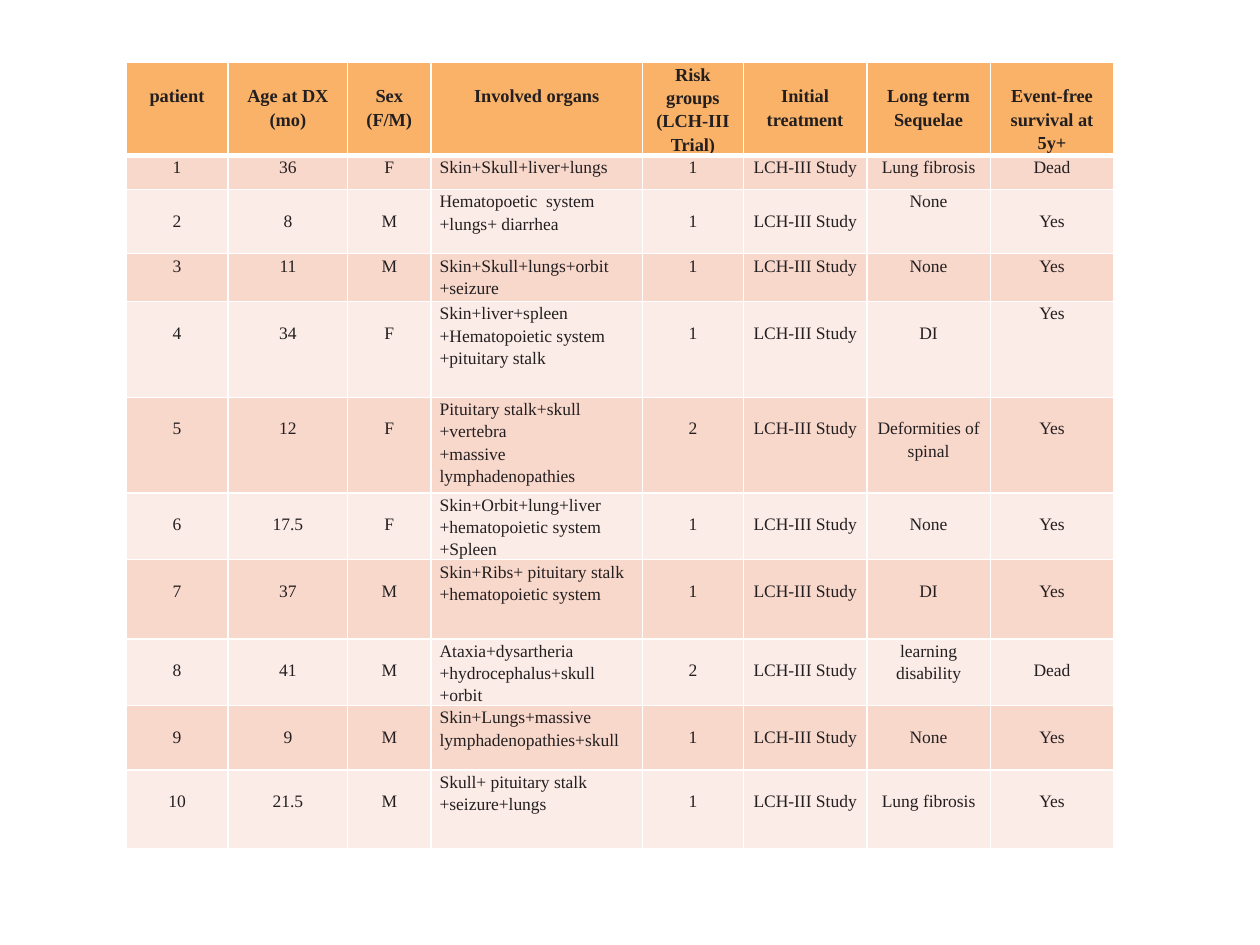
from dataclasses import dataclass

from lxml import etree
from pptx import Presentation
from pptx.dml.color import RGBColor
from pptx.enum.text import PP_ALIGN
from pptx.oxml.ns import qn
from pptx.util import Inches, Pt

CENTER = PP_ALIGN.CENTER
LEFT = PP_ALIGN.LEFT
GRID_COLUMNS, GRID_ROWS = 1000, 750


@dataclass(frozen=True)
class Theme:
    font: str = "Times New Roman"
    ink: str = "231F20"
    header: str = "F9B268"
    bands: tuple = ("F9D8CC", "FCECE7")
    rule: str = "FFFFFF"
    header_size: float = 10.5
    body_size: float = 10
    line_spacing: float = 1.15
    header_drop: float = 12.5
    body_drop: float = 11
    thin: float = 1
    thick: float = 3


HEADINGS = ("patient", "Age at DX (mo)", "Sex\n(F/M)", "Involved organs",
            "Risk groups (LCH-III\nTrial)", "Initial treatment",
            "Long term Sequelae", "Event-free survival at 5y+")
ORGANS, RISK, SEQUELAE, SURVIVAL = 3, 4, 6, 7
TREATMENT = "LCH-III Study"
PATIENTS = (
    ("36", "F", "Skin+Skull+liver+lungs", "1", "Lung fibrosis", "Dead"),
    ("8", "M", "Hematopoetic  system\n+lungs+ diarrhea", "1", "None", "Yes"),
    ("11", "M", "Skin+Skull+lungs+orbit +seizure", "1", "None", "Yes"),
    ("34", "F", "Skin+liver+spleen\n+Hematopoietic system +pituitary stalk", "1", "DI", "Yes"),
    ("12", "F", "Pituitary stalk+skull\n+vertebra\n+massive lymphadenopathies", "2",
     "Deformities of spinal", "Yes"),
    ("17.5", "F", "Skin+Orbit+lung+liver\n+hematopoietic system\n+Spleen", "1", "None", "Yes"),
    ("37", "M", "Skin+Ribs+ pituitary stalk +hematopoietic system", "1", "DI", "Yes"),
    ("41", "M", "Ataxia+dysartheria\n+hydrocephalus+skull\n+orbit", "2",
     "learning disability", "Dead"),
    ("9", "M", "Skin+Lungs+massive lymphadenopathies+skull", "1", "None", "Yes"),
    ("21.5", "M", "Skull+ pituitary stalk +seizure+lungs", "1", "Lung fibrosis", "Yes"),
)
COLUMN_WIDTHS = (81, 95, 66, 168, 80, 98, 98, 98)
ROW_HEIGHTS = (53, 27, 51, 38, 76, 76, 51, 63, 51, 51, 63)
SINGLE_LINE_PATIENTS = (1, 3)
TOP_CELLS = {(0, RISK), (2, SEQUELAE), (4, SURVIVAL), (8, SEQUELAE)}


def write_text(frame, text, *, font, size, color, bold, align, spacing):
    for index, line in enumerate(text.split("\n")):
        paragraph = frame.add_paragraph() if index else frame.paragraphs[0]
        paragraph.alignment = align
        paragraph.line_spacing = spacing
        run = paragraph.add_run()
        run.text = line
        run.font.name = font
        run.font.size = Pt(size)
        run.font.bold = bold
        run.font.color.rgb = RGBColor.from_string(color)


class SlideBuilder:
    def __init__(self, deck, theme):
        self.theme = theme
        self.slide = deck.slides.add_slide(deck.slide_layouts[6])
        self.column = deck.slide_width / GRID_COLUMNS
        self.row = deck.slide_height / GRID_ROWS

    def x(self, columns):
        return round(columns * self.column)

    def y(self, rows):
        return round(rows * self.row)

    def borders(self, cell, **widths):
        properties = cell._tc.get_or_add_tcPr()
        for side in "LRTB":
            width = widths.get(side, self.theme.thin)
            edge = etree.SubElement(properties, qn(f"a:ln{side}"), w=str(Pt(width)))
            fill = etree.SubElement(edge, qn("a:solidFill"))
            etree.SubElement(fill, qn("a:srgbClr"), val=self.theme.rule)

    def cell(self, cell, text, *, fill, size, drop=0, bold=False, align=CENTER, **widths):
        cell.margin_left = cell.margin_right = Inches(0.07)
        cell.margin_top, cell.margin_bottom = Pt(drop), 0
        self.borders(cell, **widths)
        cell.fill.solid()
        cell.fill.fore_color.rgb = RGBColor.from_string(fill)
        write_text(cell.text_frame, text, font=self.theme.font, size=size,
                   color=self.theme.ink, bold=bold, align=align,
                   spacing=self.theme.line_spacing)

    def table(self, left, top, widths, heights):
        table = self.slide.shapes.add_table(
            len(heights), len(widths), self.x(left), self.y(top),
            self.x(sum(widths)), self.y(sum(heights))).table
        table.first_row = table.horz_banding = False
        for column, width in zip(table.columns, widths):
            column.width = self.x(width)
        for row, height in zip(table.rows, heights):
            row.height = self.y(height)
        return table

    def patient_table(self):
        theme = self.theme
        table = self.table(100, 49, COLUMN_WIDTHS, ROW_HEIGHTS)
        for column, heading in enumerate(HEADINGS):
            drop = 0 if (0, column) in TOP_CELLS else theme.header_drop
            self.cell(table.cell(0, column), heading, fill=theme.header,
                      size=theme.header_size, drop=drop, bold=True, B=theme.thick)
        for number, (age, sex, organs, risk, sequelae, survival) in enumerate(PATIENTS, 1):
            values = (str(number), age, sex, organs, risk, TREATMENT, sequelae, survival)
            for column, value in enumerate(values):
                at_top = (column == ORGANS or number in SINGLE_LINE_PATIENTS
                          or (number, column) in TOP_CELLS)
                self.cell(table.cell(number, column), value,
                          fill=theme.bands[(number - 1) % 2], size=theme.body_size,
                          drop=0 if at_top else theme.body_drop,
                          align=LEFT if column == ORGANS else CENTER,
                          T=theme.thick if number == 1 else theme.thin)


def main():
    deck = Presentation()
    deck.slide_width, deck.slide_height = Inches(10), Inches(7.5)
    SlideBuilder(deck, Theme()).patient_table()
    deck.save("out.pptx")


if __name__ == "__main__":
    main()
